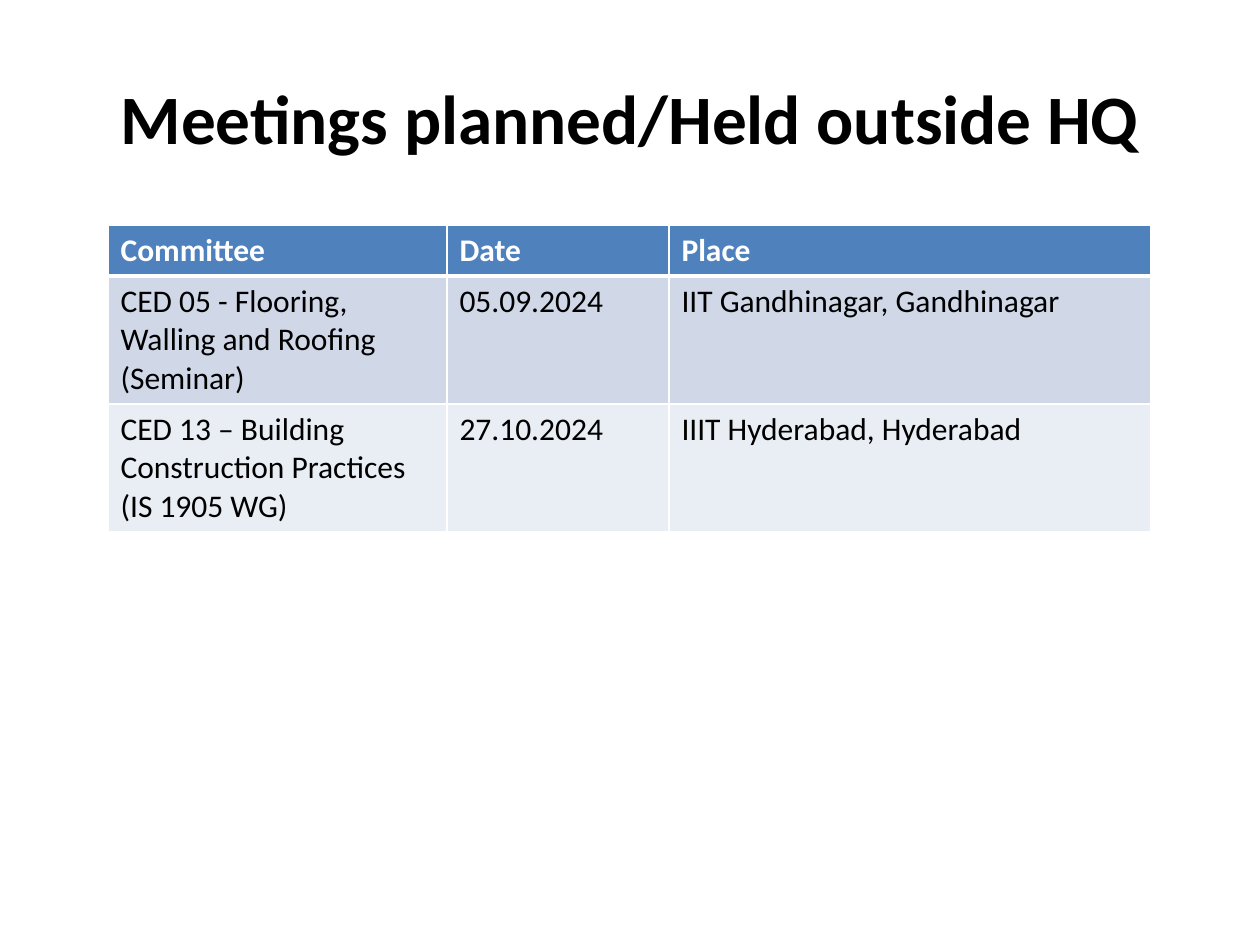
from lxml import etree
from pptx import Presentation
from pptx import util as u
from pptx.dml.color import RGBColor
from pptx.enum import text
from pptx.oxml import ns

PX = 914400 / 126  # EMU in one px
FONT = "Calibri"
WHITE, BLACK, HEADER = "FFFFFF", "000000", "4F81BD"
BANDS = ("D0D8E8", "E9EDF4")
COLUMNS = (339, 222, 482)
ROW_HEIGHTS = (50, 128, 128)
MEETINGS = (
    ("Committee", "Date", "Place"),
    ("CED 05 - Flooring, Walling and Roofing (Seminar)", "05.09.2024",
     "IIT Gandhinagar, Gandhinagar"),
    ("CED 13 – Building Construction Practices (IS 1905 WG)", "27.10.2024",
     "IIIT Hyderabad, Hyderabad"),
)


def px(n):
    return u.Emu(round(n * PX))


def rgb(value):
    return RGBColor.from_string(value)


def write(tf, words, color, **font):
    p = tf.paragraphs[0]
    r = p.add_run()
    r.text = words
    r.font.color.rgb = rgb(color)
    for name, value in {"name": FONT, **font}.items():
        setattr(r.font, name, value)
    return p


def add_borders(cell, widths):
    """Draw white cell borders, given in points by side."""
    tcPr = cell._tc.get_or_add_tcPr()
    for i, (side, width) in enumerate(widths.items()):
        ln = etree.Element(ns.qn("a:ln" + side), w=str(u.Pt(width)))
        fill = etree.SubElement(ln, ns.qn("a:solidFill"))
        etree.SubElement(fill, ns.qn("a:srgbClr"), val=WHITE)
        tcPr.insert(i, ln)  # borders come before the cell fill


def place_title(s, x, y, w, h):
    sp = s.shapes.title
    box = {"left": x, "top": y, "width": w, "height": h}
    for name, value in box.items():
        setattr(sp, name, px(value))
    tf = sp.text_frame
    tf.vertical_anchor = text.MSO_ANCHOR.MIDDLE
    p = write(tf, "Meetings planned/Held outside HQ", BLACK,
              size=u.Pt(39.6), bold=True)
    p.alignment = text.PP_ALIGN.CENTER


def place_meetings(s, x, y):
    frame = s.shapes.add_table(len(MEETINGS), len(COLUMNS), px(x), px(y),
                               px(sum(COLUMNS)), px(sum(ROW_HEIGHTS)))
    table = frame.table
    for column, width in zip(table.columns, COLUMNS):
        column.width = px(width)
    for i, (row, values) in enumerate(zip(table.rows, MEETINGS)):
        row.height = px(ROW_HEIGHTS[i])
        head = i == 0
        for cell, value in zip(row.cells, values):
            cell.fill.solid()
            cell.fill.fore_color.rgb = rgb(HEADER if head else BANDS[(i - 1) % 2])
            write(cell.text_frame, value, WHITE if head else BLACK,
                  size=u.Pt(18), bold=head)
            # A thick rule parts the header from the body
            add_borders(cell, {"L": 1, "R": 1, "T": 3 if i == 1 else 1,
                               "B": 3 if head else 1})


def main():
    prs = Presentation()
    prs.slide_width, prs.slide_height = px(1260), px(945)
    s = prs.slides.add_slide(prs.slide_layouts[5])  # title only
    place_title(s, 63, 38, 1134, 157)
    place_meetings(s, 108, 225)
    prs.save("out.pptx")


if __name__ == "__main__":
    main()
